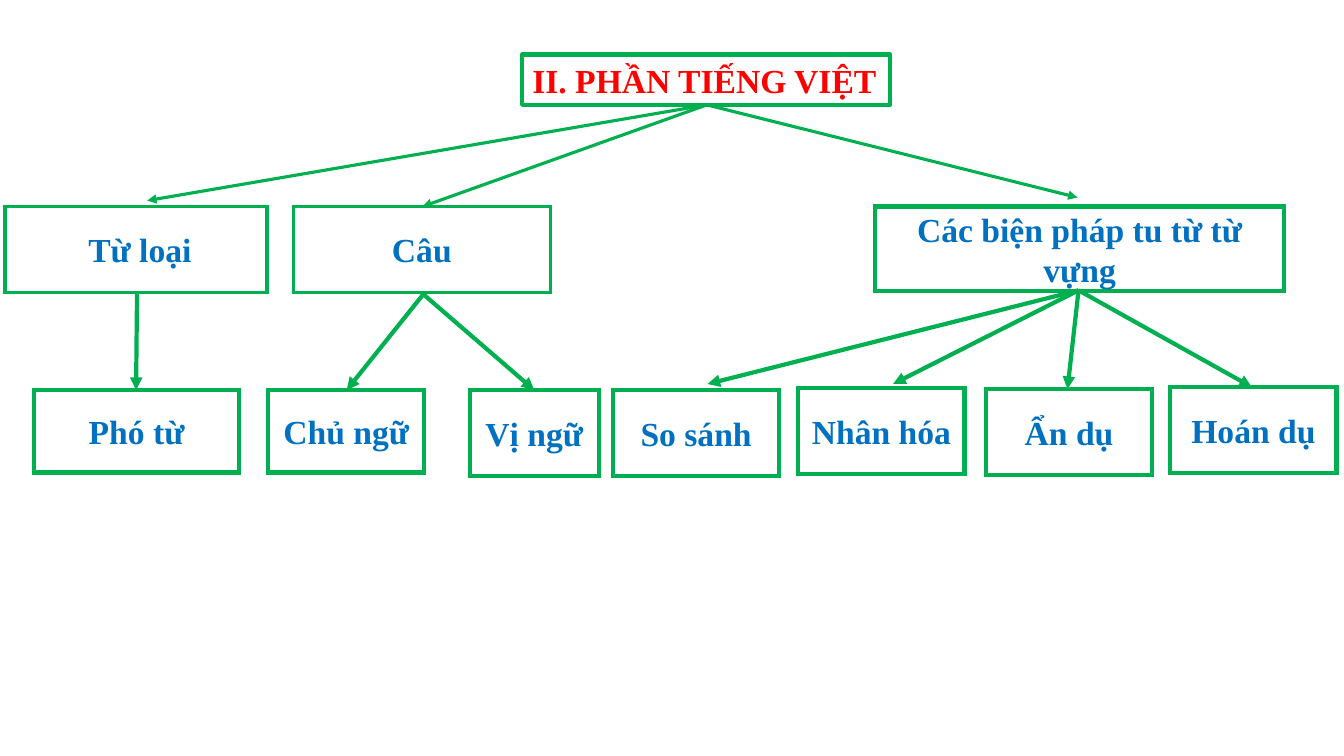
from dataclasses import dataclass

from lxml import etree
from pptx import Presentation
from pptx.dml.color import RGBColor
from pptx.enum.shapes import MSO_CONNECTOR, MSO_SHAPE
from pptx.enum.text import MSO_ANCHOR, MSO_AUTO_SIZE, PP_ALIGN
from pptx.oxml.ns import qn
from pptx.util import Pt

RECTANGLE = MSO_SHAPE.RECTANGLE
STRAIGHT = MSO_CONNECTOR.STRAIGHT
CENTER, LEFT = PP_ALIGN.CENTER, PP_ALIGN.LEFT
MIDDLE, TOP = MSO_ANCHOR.MIDDLE, MSO_ANCHOR.TOP
FIXED_SIZE = MSO_AUTO_SIZE.NONE
TITLE_ONLY = 5


@dataclass(frozen=True)
class Theme:
    font: str = "Times New Roman"
    size: float = 24
    heading: RGBColor = RGBColor(0xFF, 0x00, 0x00)
    label: RGBColor = RGBColor(0x00, 0x70, 0xC0)
    outline: RGBColor = RGBColor(0x00, 0xB0, 0x50)
    box_fill: RGBColor = RGBColor(0xFF, 0xFF, 0xFF)
    thin: float = 2.25
    thick: float = 3


THEME = Theme()

HEADING = "II. PHẦN TIẾNG VIỆT"
HEADING_BOX = (373, 38.9, 262.8, 36)
HEADING_FOOT = (504.9, 74.9)

# Label, box (left, top, width, height), outline width, arrow tip above, arrow start below
BRANCHES = [
    (" Từ loại", (3.6, 147.6, 187.2, 61.2), THEME.thin, (105.1, 143.3), (97.9, 208.8)),
    ("Câu", (209.5, 147.6, 183.6, 61.2), THEME.thin, (301.7, 147.6), (302.4, 210.2)),
    ("Các biện pháp tu từ từ vựng", (625, 147.6, 292.3, 60.5), THEME.thick,
     (769.7, 141.1), (770.4, 207.4)),
]

# Label, box, arrow tip; one list for each branch
LEAVES = [
    [("Phó từ", (24.5, 278.6, 146.2, 59), (97.2, 278.6))],
    [("Chủ ngữ", (191.5, 278.6, 111.6, 59), (247.7, 278.6)),
     ("Vị ngữ", (335.5, 278.6, 92.2, 61.2), (381.6, 278.6))],
    [("So sánh", (437.8, 278.6, 118.8, 61.2), (505.4, 274.3)),
     ("Nhân hóa", (570.2, 277.2, 118.8, 61.2), (637.9, 274.3)),
     ("Ẩn dụ", (704.2, 277.9, 118.8, 61.2), (762.5, 277.9)),
     ("Hoán dụ", (835.9, 276.5, 118.8, 61.2), (894.2, 276.5))],
]


def write_text(frame, text, color, align, anchor):
    frame.text = text
    frame.word_wrap = True
    frame.vertical_anchor = anchor
    paragraph = frame.paragraphs[0]
    paragraph.alignment = align
    font = paragraph.runs[0].font
    font.name = THEME.font
    font.size = Pt(THEME.size)
    font.bold = True
    font.color.rgb = color


def set_outline(line, width):
    line.color.rgb = THEME.outline
    line.width = Pt(width)


def add_heading(slide):
    heading = slide.shapes.title
    left, top, width, height = map(Pt, HEADING_BOX)
    heading.left, heading.top = left, top
    heading.width, heading.height = width, height
    set_outline(heading.line, THEME.thick)
    write_text(heading.text_frame, HEADING, THEME.heading, LEFT, TOP)
    heading.text_frame.margin_right = 0
    heading.text_frame.auto_size = FIXED_SIZE


def add_box(slide, label, bounds, outline_width, filled=False):
    box = slide.shapes.add_shape(RECTANGLE, *map(Pt, bounds))
    box.shadow.inherit = False
    if filled:
        box.fill.solid()
        box.fill.fore_color.rgb = THEME.box_fill
    else:
        box.fill.background()
    set_outline(box.line, outline_width)
    sharp_corner = etree.SubElement(box.line._get_or_add_ln(), qn("a:miter"))
    sharp_corner.set("lim", "800000")
    write_text(box.text_frame, label, THEME.label, CENTER, MIDDLE)


def add_arrow(slide, start, tip, width):
    arrow = slide.shapes.add_connector(STRAIGHT, *map(Pt, start + tip))
    set_outline(arrow.line, width)
    etree.SubElement(arrow.line._get_or_add_ln(), qn("a:tailEnd")).set("type", "triangle")
    etree.SubElement(arrow._element.spPr, qn("a:effectLst"))


def main():
    deck = Presentation()
    deck.slide_width, deck.slide_height = Pt(960), Pt(540)
    slide = deck.slides.add_slide(deck.slide_layouts[TITLE_ONLY])

    add_heading(slide)
    for (label, bounds, outline_width, tip, foot), leaves in zip(BRANCHES, LEAVES):
        add_arrow(slide, HEADING_FOOT, tip, THEME.thin)
        add_box(slide, label, bounds, outline_width, filled=True)
        for leaf_label, leaf_bounds, leaf_tip in leaves:
            add_arrow(slide, foot, leaf_tip, THEME.thick)
            add_box(slide, leaf_label, leaf_bounds, THEME.thick)

    deck.save("out.pptx")


if __name__ == "__main__":
    main()
